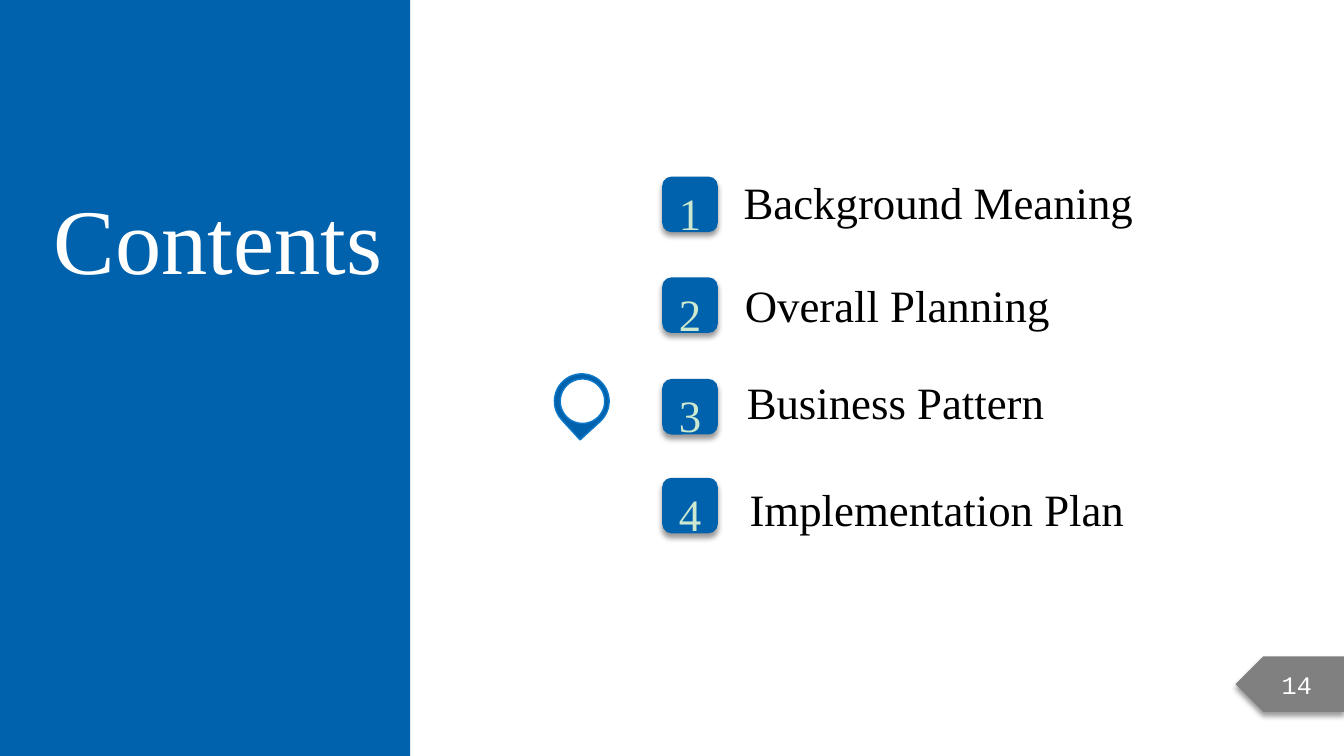
from dataclasses import dataclass

from lxml.etree import SubElement
from pptx import Presentation
from pptx.dml.color import RGBColor as RGB
from pptx.enum.shapes import MSO_SHAPE as Shape
from pptx.enum.text import MSO_ANCHOR as Anchor
from pptx.enum.text import MSO_AUTO_SIZE as AutoSize
from pptx.enum.text import PP_ALIGN as Align
from pptx.oxml.ns import qn
from pptx.util import Cm, Pt


@dataclass(frozen=True)
class Theme:
    blue: RGB = RGB(0x00, 0x62, 0xAC)
    outline: RGB = RGB(0x0D, 0x79, 0xCA)
    gray: RGB = RGB(0x80, 0x80, 0x80)
    mint: RGB = RGB(0xCC, 0xE8, 0xCF)
    white: RGB = RGB(0xFF, 0xFF, 0xFF)
    black: RGB = RGB(0x00, 0x00, 0x00)
    serif: str = "Times New Roman"
    mono: str = "Courier New"
    title: Pt = Pt(66)
    body: Pt = Pt(32)
    page: Pt = Pt(18)


@dataclass(frozen=True)
class Box:
    """Left, top, width and height in centimetres."""
    left: float
    top: float
    width: float
    height: float

    def lengths(self) -> tuple:
        return Cm(self.left), Cm(self.top), Cm(self.width), Cm(self.height)


@dataclass(frozen=True)
class Entry:
    title: str
    badge_top: float
    title_left: float
    title_top: float


THEME = Theme()
BADGE_LEFT, BADGE_SIZE = 16.69, 1.4
TITLE_WIDTH, TITLE_HEIGHT = 12.98, 1.63
ENTRIES = [
    Entry("Background Meaning", 4.45, 18.49, 4.27),
    Entry("Overall Planning", 6.99, 18.52, 6.88),
    Entry("Business Pattern", 9.55, 18.57, 9.32),
    Entry("Implementation Plan", 12.04, 18.64, 12.01),
]


def write(tf, text: str, para: dict, font: dict, color: RGB) -> None:
    p = tf.paragraphs[0]
    for name, value in para.items():
        setattr(p, name, value)
    r = p.add_run()
    r.text = text
    for name, value in font.items():
        setattr(r.font, name, value)
    r.font.color.rgb = color


def add_filled(shapes, kind: Shape, box: Box, fill: RGB, line: RGB | None = None):
    sp = shapes.add_shape(kind, *box.lengths())
    sp.shadow.inherit = False
    sp.fill.solid()
    sp.fill.fore_color.rgb = fill
    if line is None:
        sp.line.fill.background()
    else:
        sp.line.color.rgb = line
        sp.line.width = Pt(1)
    return sp


def add_drop_shadow(sp) -> None:
    effects = sp._element.spPr.find(qn("a:effectLst"))
    shadow = SubElement(effects, qn("a:outerShdw"), blurRad=str(Pt(4)),
                        dist=str(Pt(3)), dir="5400000", rotWithShape="0")
    color = SubElement(shadow, qn("a:srgbClr"), val=str(THEME.black))
    SubElement(color, qn("a:alpha"), val="40000")


def add_text(shapes, box: Box, text: str, wrap: bool, para: dict, size: Pt, color: RGB) -> None:
    tf = shapes.add_textbox(*box.lengths()).text_frame
    tf.word_wrap = wrap
    tf.auto_size = AutoSize.SHAPE_TO_FIT_TEXT
    write(tf, text, para, {"name": THEME.serif, "size": size}, color)


def add_entry(shapes, number: int, entry: Entry) -> None:
    box = Box(BADGE_LEFT, entry.badge_top, BADGE_SIZE, BADGE_SIZE)
    badge = add_filled(shapes, Shape.ROUNDED_RECTANGLE, box, THEME.blue)
    add_drop_shadow(badge)
    badge.text_frame.vertical_anchor = Anchor.MIDDLE
    write(badge.text_frame, str(number), {"alignment": Align.CENTER, "line_spacing": 1.3},
          {"name": THEME.serif, "size": THEME.body}, THEME.mint)
    add_text(shapes, Box(entry.title_left, entry.title_top, TITLE_WIDTH, TITLE_HEIGHT),
             entry.title, True, {"alignment": Align.LEFT}, THEME.body, THEME.black)


def add_page_tag(shapes, number: str) -> None:
    tag = add_filled(shapes, Shape.PENTAGON, Box(31.14, 16.54, 2.74, 1.4), THEME.gray)
    tag._element.spPr.xfrm.set("flipH", "1")
    add_drop_shadow(tag)
    tag.text_frame.vertical_anchor = Anchor.MIDDLE
    write(tag.text_frame, number, {"alignment": Align.CENTER},
          {"name": THEME.mono, "size": THEME.page}, THEME.white)


def add_marker(shapes) -> None:
    """Map pin that points out the current section."""
    pin = shapes.add_group_shape()
    drop = add_filled(pin.shapes, Shape.TEAR, Box(13.97, 9.42, 1.38, 1.38),
                      THEME.blue, THEME.outline)
    drop.rotation = 137.5
    add_filled(pin.shapes, Shape.OVAL, Box(14.12, 9.55, 1.12, 1.12),
               THEME.white, THEME.outline)


def main() -> None:
    prs = Presentation()
    prs.slide_width, prs.slide_height = Cm(33.87), Cm(19.05)
    shapes = prs.slides.add_slide(prs.slide_layouts[6]).shapes

    add_page_tag(shapes, "14")
    add_filled(shapes, Shape.RECTANGLE, Box(0, 0, 10.34, 19.05), THEME.blue)
    add_text(shapes, Box(1.07, 3.63, 8.86, 3.91), "Contents", False,
             {"alignment": Align.CENTER, "line_spacing": 1.3}, THEME.title, THEME.white)
    add_marker(shapes)
    for number, entry in enumerate(ENTRIES, start=1):
        add_entry(shapes, number, entry)
    prs.save("out.pptx")


if __name__ == "__main__":
    main()
